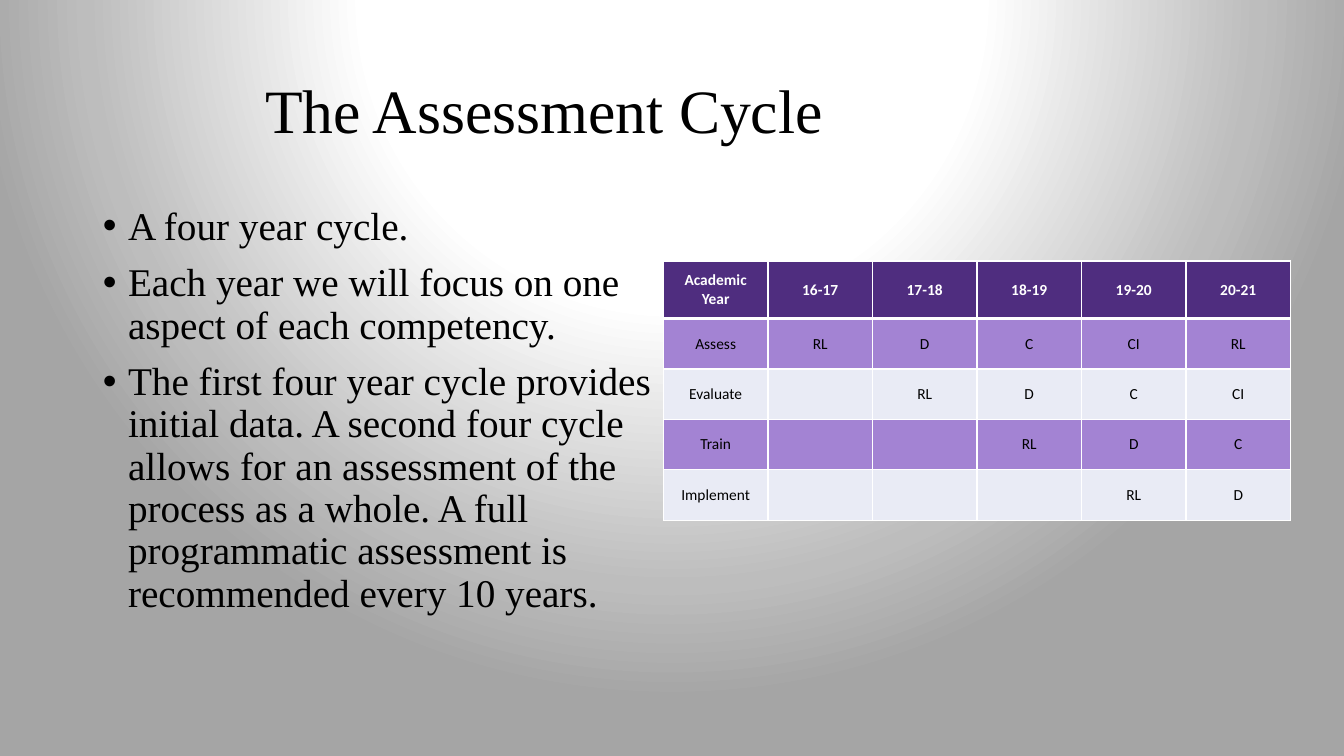
from dataclasses import dataclass

from pptx import Presentation
from pptx.dml.color import RGBColor
from pptx.enum.text import MSO_ANCHOR, MSO_AUTO_SIZE, PP_ALIGN
from pptx.oxml import parse_xml
from pptx.oxml.ns import nsdecls
from pptx.util import Inches, Pt


@dataclass(frozen=True)
class Theme:
    serif: str = "Times New Roman"
    sans: str = "Calibri"
    black: str = "000000"
    white: str = "FFFFFF"
    head: str = "4F2D7F"
    bands: tuple = ("A383D3", "E9EBF5")
    glow: tuple = ((0, "FFFFFF"), (40, "FFFFFF"), (76, "BDBDBD"), (91, "A5A5A5"))
    title: int = 44
    body: int = 28
    small: int = 11


THEME = Theme()

POINTS = [
    "A four year cycle.",
    "Each year we will focus on one aspect of each competency.",
    "The first four year cycle provides initial data. A second four cycle "
    "allows for an assessment of the process as a whole. A full programmatic "
    "assessment is recommended every 10 years.",
]
YEARS = ["16-17", "17-18", "18-19", "19-20", "20-21"]
STEPS = ["Assess", "Evaluate", "Train", "Implement"]
CODES = ["RL", "D", "C", "CI", "RL"]


def write(para, text, font=THEME.serif, size=THEME.body, color=THEME.black,
          bold=False, align=PP_ALIGN.LEFT, line=None, before=0):
    para.text = text
    para.alignment = align
    para.line_spacing = line
    para.space_before = Pt(before)
    para.font.name = font
    para.font.size = Pt(size)
    para.font.bold = bold
    para.font.color.rgb = RGBColor.from_string(color)


def place(shape, left, top, width, height):
    shape.left, shape.top = Inches(left), Inches(top)
    shape.width, shape.height = Inches(width), Inches(height)


def paint(slide):
    """Fill the background with a round glow centred above the slide."""
    slide.background.fill.solid()
    solid = slide.background._cSld.xpath("p:bg/p:bgPr/a:solidFill")[0]
    stops = "".join(
        f'<a:gs pos="{pos * 1000}"><a:srgbClr val="{color}"/></a:gs>'
        for pos, color in THEME.glow)
    solid.getparent().replace(solid, parse_xml(
        f'<a:gradFill {nsdecls("a")} rotWithShape="1"><a:gsLst>{stops}</a:gsLst>'
        '<a:path path="circle"><a:fillToRect l="50000" t="-80000" r="50000" '
        'b="180000"/></a:path></a:gradFill>'))


def add_title(slide, text):
    title = slide.shapes.title
    place(title, 2.53, 0.4, 9.88, 1.45)
    frame = title.text_frame
    frame.auto_size = MSO_AUTO_SIZE.NONE
    frame.vertical_anchor = MSO_ANCHOR.MIDDLE
    write(frame.paragraphs[0], text, size=THEME.title, line=0.9)


def add_list(slide, items):
    body = slide.placeholders[1]
    place(body, 0.92, 2, 5.67, 4.76)
    frame = body.text_frame
    frame.auto_size = MSO_AUTO_SIZE.NONE
    for i, item in enumerate(items):
        para = frame.add_paragraph() if i else frame.paragraphs[0]
        props = para._p.get_or_add_pPr()
        props.set("marL", str(Inches(0.25)))
        props.set("indent", str(Inches(-0.25)))
        props.append(parse_xml(f'<a:buFont {nsdecls("a")} typeface="Arial"/>'))
        props.append(parse_xml(f'<a:buChar {nsdecls("a")} char="•"/>'))
        write(para, item, line=0.9, before=10 if i else 0)


def edge(cell, base):
    """Draw white cell borders, with the bottom one base points wide."""
    props = cell._tc.get_or_add_tcPr()
    for i, (side, width) in enumerate(zip("LRTB", (1, 1, 1, base))):
        props.insert(i, parse_xml(
            f'<a:ln{side} {nsdecls("a")} w="{Pt(width)}"><a:solidFill>'
            f'<a:srgbClr val="{THEME.white}"/></a:solidFill></a:ln{side}>'))


def add_grid(slide, rows):
    frame = slide.shapes.add_table(
        len(rows), len(rows[0]), Inches(6.58), Inches(2.59),
        Inches(6.22), Inches(2.57))
    table = frame.table
    table.horz_banding = False
    for r, row in enumerate(rows):
        top = r == 0
        table.rows[r].height = Inches(0.57 if top else 0.5)
        for c, text in enumerate(row):
            cell = table.cell(r, c)
            cell.vertical_anchor = MSO_ANCHOR.MIDDLE
            cell.fill.solid()
            cell.fill.fore_color.rgb = RGBColor.from_string(
                THEME.head if top else THEME.bands[(r - 1) % 2])
            edge(cell, 3 if top else 1)
            write(cell.text_frame.paragraphs[0], text, font=THEME.sans,
                  size=THEME.small, bold=top, align=PP_ALIGN.CENTER,
                  color=THEME.white if top else THEME.black)


def main():
    deck = Presentation()
    deck.slide_width, deck.slide_height = Inches(13.33), Inches(7.5)
    slide = deck.slides.add_slide(deck.slide_layouts[1])
    paint(slide)
    add_title(slide, "The Assessment Cycle")
    add_list(slide, POINTS)
    # Each step starts one year after the step above it.
    plan = [[step] + [""] * i + CODES[:len(YEARS) - i]
            for i, step in enumerate(STEPS)]
    add_grid(slide, [["Academic Year"] + YEARS] + plan)
    deck.save("out.pptx")


if __name__ == "__main__":
    main()
